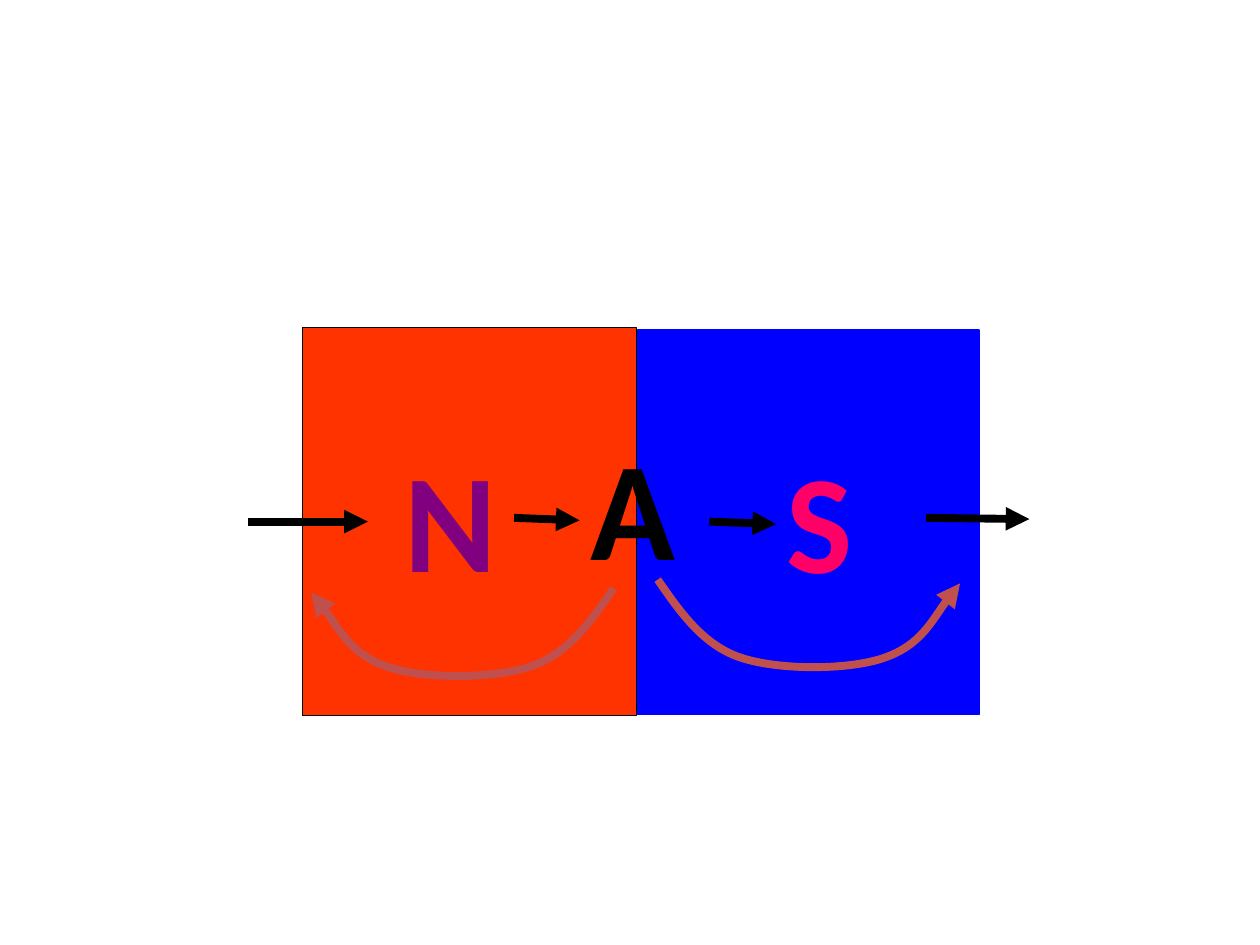
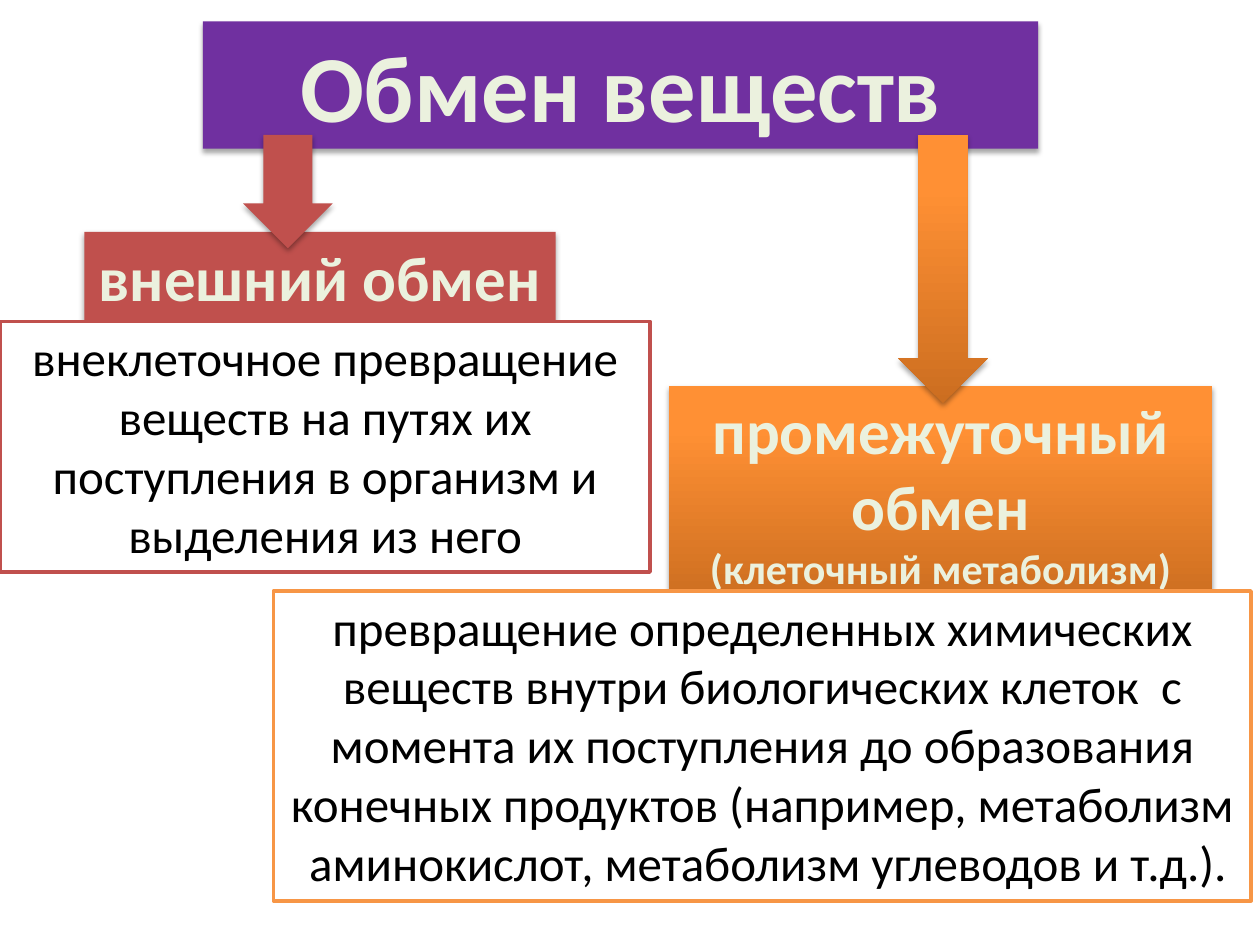
from copy import deepcopy

from lxml import etree
from pptx import Presentation
from pptx import util as u
from pptx.dml import color
from pptx.enum import shapes, text
from pptx.oxml import ns

FONT = "Calibri"
BLACK, WHITE, CREAM = "000000", "FFFFFF", "EBF1DE"
RED, ORANGE, PURPLE = "C0504D", "F79646", "7030A0"
ORANGE_FADE = [(0, "CC6E20"), (0.8, "FF9034"), (1, "FF9136")]
RECTANGLE = shapes.MSO_SHAPE.RECTANGLE
DOWN_ARROW = shapes.MSO_SHAPE.DOWN_ARROW


def rgb(value):
    return color.RGBColor.from_string(value)


def add_child(parent, tag, **attributes):
    child = etree.SubElement(parent, ns.qn(tag))
    for name, value in attributes.items():
        child.set(name, str(value))
    return child


def write(shape, lines, size=28, ink=BLACK, bold=False,
          align=text.PP_ALIGN.CENTER, anchor=text.MSO_ANCHOR.TOP):
    """Fill a shape with lines; a line is text or a (text, size) pair."""
    frame = shape.text_frame
    frame.word_wrap = True
    frame.vertical_anchor = anchor
    for index, line in enumerate(lines):
        words, points = line if isinstance(line, tuple) else (line, size)
        para = frame.add_paragraph() if index else frame.paragraphs[0]
        para.alignment = align
        span = para.add_run()
        span.text = words
        span.font.name = FONT
        span.font.size = u.Pt(points)
        span.font.bold = bold
        span.font.color.rgb = rgb(ink)


def paint(shape, fill):
    """Apply a solid colour, or a fade that rises from the bottom."""
    if isinstance(fill, str):
        shape.fill.solid()
        shape.fill.fore_color.rgb = rgb(fill)
        return
    shape.fill.gradient()
    shape.fill.gradient_angle = 90
    stop_list = next(shape._element.spPr.iter(ns.qn("a:gsLst")))
    while len(stop_list) < len(fill):
        stop_list.append(deepcopy(stop_list[-1]))
    for stop, (position, value) in zip(shape.fill.gradient_stops, fill):
        stop.position = position
        stop.color.rgb = rgb(value)


def add_block(page, box, fill, kind=RECTANGLE, line=None, width=2, shadow=False):
    shape = page.shapes.add_shape(kind, *map(u.Inches, box))
    paint(shape, fill)
    if line:
        shape.line.color.rgb = rgb(line)
        shape.line.width = u.Pt(width)
    else:
        shape.line.fill.background()
    shape.shadow.inherit = False
    if shadow:
        effects = shape._element.spPr.find(ns.qn("a:effectLst"))
        outer = add_child(effects, "a:outerShdw", blurRad=u.Pt(3.1),
                          dist=u.Pt(1.8), dir=90 * 60000, rotWithShape=0)
        add_child(add_child(outer, "a:srgbClr", val=BLACK), "a:alpha", val=35000)
    return shape


def style_arrow(shape, ink):
    shape.line.color.rgb = rgb(ink)
    shape.line.width = u.Pt(4.5)
    add_child(shape.line._get_or_add_ln(), "a:tailEnd", type="triangle")


def add_arrow(page, start, end):
    arrow = page.shapes.add_connector(
        shapes.MSO_CONNECTOR.STRAIGHT, *map(u.Inches, start + end))
    style_arrow(arrow, BLACK)
    add_child(arrow._element.spPr, "a:effectLst")


def add_curve(page, left, top, points):
    """Draw a cubic curve: a start, then three points for each piece."""
    places = [(u.Inches(left + x), u.Inches(top + y)) for x, y in points]
    builder = page.shapes.build_freeform(*places[0])
    builder.add_line_segments(places[1:], close=False)
    curve = builder.convert_to_shape()
    curve.fill.background()
    curve.shadow.inherit = False
    outline = next(curve._element.iter(ns.qn("a:path")))
    steps = outline.findall(ns.qn("a:lnTo"))
    for index in range(0, len(steps), 3):
        piece = add_child(outline, "a:cubicBezTo")
        for step in steps[index:index + 3]:
            piece.append(step[0])
            outline.remove(step)
    style_arrow(curve, RED)


def build_magnet(page, left, top):
    # Poles
    add_block(page, (left, top, 2.65, 3.08), "FF3300", line=BLACK, width=0.75)
    add_block(page, (left + 2.66, top + 0.02, 2.71, 3.05), "0000FF",
              line="0000FF", width=0.75)

    # Letters
    for letter, x, y, ink in [("N", 0.71, 0.78, "800080"),
                              ("A", 2.19, 0.69, BLACK),
                              ("S", 3.74, 0.79, "FF0066")]:
        label = page.shapes.add_textbox(
            *map(u.Inches, (left + x, top + y, 1.22, 1.43)))
        write(label, [letter], size=80, ink=ink, bold=True,
              align=text.PP_ALIGN.LEFT)

    # Straight arrows: start, length and drop
    for x, y, length, drop in [(1.68, 1.51, 0.52, 0.02), (3.23, 1.54, 0.53, 0.02),
                               (-0.43, 1.54, 0.95, 0), (4.95, 1.51, 0.82, 0.01)]:
        start = (left + x, top + y)
        add_arrow(page, start, (start[0] + length, start[1] + drop))

    # Curved arrows, the left one mirrored
    swing = [(0, 0), (0.18, 0.26), (0.36, 0.52), (0.66, 0.62), (0.96, 0.72),
             (1.52, 0.72), (1.8, 0.62), (2.09, 0.52), (2.3, 0.13), (2.4, 0.03)]
    add_curve(page, left + 2.47, top + 2.07, [(-x, y) for x, y in swing])
    add_curve(page, left + 2.82, top + 2, swing)


def build_branch(page, left, top, heading, detail, arrow, fill, line):
    """Heading, explanation and arrow; each starts with its box in the branch."""
    def place(box):
        x, y, width, height = box
        return left + x, top + y, width, height

    box, lines = heading
    header = add_block(page, place(box), fill, shadow=True)
    write(header, lines, size=36, ink=CREAM, bold=True)
    box, words = detail
    write(add_block(page, place(box), WHITE, line=line), [words])
    pointer = add_block(page, place(arrow), fill, kind=DOWN_ARROW, shadow=True)
    pointer.adjustments[0] = 0.546
    pointer.adjustments[1] = 0.5


def build_metabolism(page):
    # Title band
    title = add_block(page, (1.61, 0.17, 6.63, 1.01), PURPLE, shadow=True)
    write(title, ["Обмен веществ"], size=54, ink=CREAM, bold=True,
          anchor=text.MSO_ANCHOR.MIDDLE)

    # External exchange
    build_branch(
        page, 0, 1.07,
        heading=((0.67, 0.77, 3.74, 0.71), ["внешний обмен"]),
        detail=((0, 1.48, 5.16, 1.99),
                "внеклеточное превращение веществ на путях их поступления "
                "в организм и выделения из него"),
        arrow=(1.93, 0, 0.71, 0.9), fill=RED, line=RED)

    # Intermediate exchange
    build_branch(
        page, 2.17, 1.07,
        heading=((3.14, 1.99, 4.31, 1.72),
                 ["промежуточный обмен", ("(клеточный метаболизм)", 24)]),
        detail=((0, 3.62, 7.76, 2.46),
                "превращение определенных химических веществ внутри "
                "биологических клеток  с момента их поступления до образования "
                "конечных продуктов (например, метаболизм  аминокислот, "
                "метаболизм углеводов и т.д.)."),
        arrow=(4.96, 0, 0.71, 2.13), fill=ORANGE_FADE, line=ORANGE)


def main():
    deck = Presentation()
    deck.slide_width, deck.slide_height = u.Inches(10), u.Inches(7.5)
    blank = deck.slide_layouts[6]
    build_magnet(deck.slides.add_slide(blank), 2.4, 2.6)
    build_metabolism(deck.slides.add_slide(blank))
    deck.save("out.pptx")


if __name__ == "__main__":
    main()
